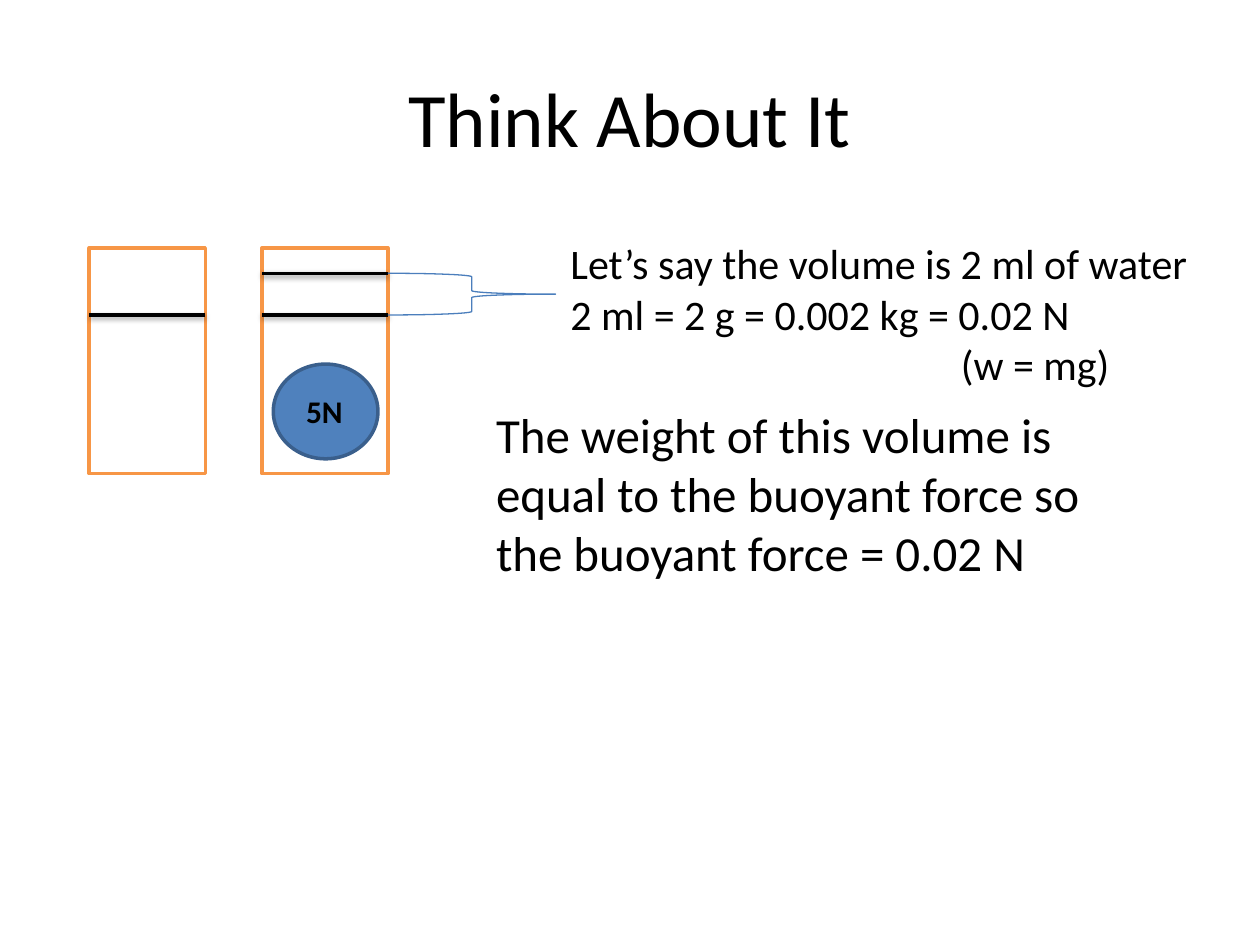
"""Builds the slide that works out a buoyant force from displaced water."""
from dataclasses import dataclass

from lxml.etree import SubElement
from pptx import Presentation
from pptx.dml.color import RGBColor
from pptx.enum.shapes import MSO_CONNECTOR, MSO_SHAPE
from pptx.enum.text import MSO_ANCHOR, PP_ALIGN
from pptx.oxml.ns import qn
from pptx.util import Cm, Pt


@dataclass(frozen=True)
class Theme:
    font: str = "Calibri"
    ink: str = "000000"
    glass: str = "FFFFFF"
    glass_edge: str = "F79646"
    ball: str = "4F81BD"
    ball_edge: str = "3A5F8C"
    brace: str = "4B7EBC"
    title_size: int = 44
    conclusion_size: int = 28
    working_size: int = 24
    label_size: int = 18
    outline: float = 2
    thin: float = 0.75


THEME = Theme()
TUBE_TOP, TUBE_HEIGHT = 5, 4.55
WATER_BEFORE, WATER_AFTER = 6.35, 5.51
TUBES = [
    (1.8, 2.34, [WATER_BEFORE]),
    (5.28, 2.54, [WATER_BEFORE, WATER_AFTER]),
]


def set_format(target, values):
    for name, value in values.items():
        setattr(target, name, value)


def add_text(slide, box, lines, size, bold=False, frame_format=None, align=PP_ALIGN.LEFT):
    frame = slide.shapes.add_textbox(*map(Cm, box)).text_frame
    set_format(frame, {"word_wrap": True, **(frame_format or {})})
    frame.text = "\n".join(lines)
    for paragraph in frame.paragraphs:
        paragraph.alignment = align
        set_format(paragraph.font, {"name": THEME.font, "size": Pt(size), "bold": bold})
        paragraph.font.color.rgb = RGBColor.from_string(THEME.ink)
    return frame


def add_figure(slide, kind, box, edge, width, fill=None):
    figure = slide.shapes.add_shape(kind, *map(Cm, box))
    figure.shadow.inherit = False
    if fill:
        figure.fill.solid()
        figure.fill.fore_color.rgb = RGBColor.from_string(fill)
    else:
        figure.fill.background()
    figure.line.color.rgb = RGBColor.from_string(edge)
    figure.line.width = Pt(width)


def add_water_level(slide, left, width, height):
    level = slide.shapes.add_connector(
        MSO_CONNECTOR.STRAIGHT, Cm(left), Cm(height), Cm(left + width), Cm(height)
    )
    level.line.color.rgb = RGBColor.from_string(THEME.ink)
    level.line.width = Pt(THEME.outline)
    effects = SubElement(level._element.spPr, qn("a:effectLst"))
    shadow = SubElement(
        effects, qn("a:outerShdw"), blurRad=str(Pt(3.1)), dist=str(Pt(1.6)),
        dir="5400000", rotWithShape="0",
    )
    color = SubElement(shadow, qn("a:srgbClr"), val=THEME.ink)
    SubElement(color, qn("a:alpha"), val="38000")


def add_tube(slide, left, width, levels):
    add_figure(slide, MSO_SHAPE.RECTANGLE, (left, TUBE_TOP, width, TUBE_HEIGHT),
               THEME.glass_edge, THEME.outline, THEME.glass)
    for height in levels:
        add_water_level(slide, left, width, height)


def main():
    presentation = Presentation()
    set_format(presentation, {"slide_width": Cm(25.4), "slide_height": Cm(19.05)})
    slide = presentation.slides.add_slide(presentation.slide_layouts[6])

    add_text(slide, (1.27, 0.76, 22.86, 3.18), ["Think About It"], THEME.title_size,
             frame_format={"vertical_anchor": MSO_ANCHOR.MIDDLE}, align=PP_ALIGN.CENTER)
    for left, width, levels in TUBES:
        add_tube(slide, left, width, levels)
    add_figure(slide, MSO_SHAPE.OVAL, (5.51, 7.34, 2.11, 1.91),
               THEME.ball_edge, THEME.outline, THEME.ball)
    add_figure(slide, MSO_SHAPE.RIGHT_BRACE,
               (7.82, WATER_AFTER, 3.38, WATER_BEFORE - WATER_AFTER), THEME.brace, THEME.thin)
    add_text(slide, (9.75, 8.03, 13.11, 3.84),
             ["The weight of this volume is equal to the buoyant force so the buoyant force = 0.02 N"],
             THEME.conclusion_size)
    add_text(slide, (5.92, 7.77, 1.47, 1.02), ["5N"], THEME.label_size, bold=True)
    working = add_text(
        slide, (11.25, 4.67, 13.51, 3.33),
        ["Let’s say the volume is 2 ml of water", "2 ml = 2 g = 0.002 kg = 0.02 N", "(w = mg)"],
        THEME.working_size,
    )
    formula = working.paragraphs[-1]._p.get_or_add_pPr()
    formula.set("marL", str(Cm(7.87)))
    formula.set("indent", "0")

    presentation.save("out.pptx")


if __name__ == "__main__":
    main()
